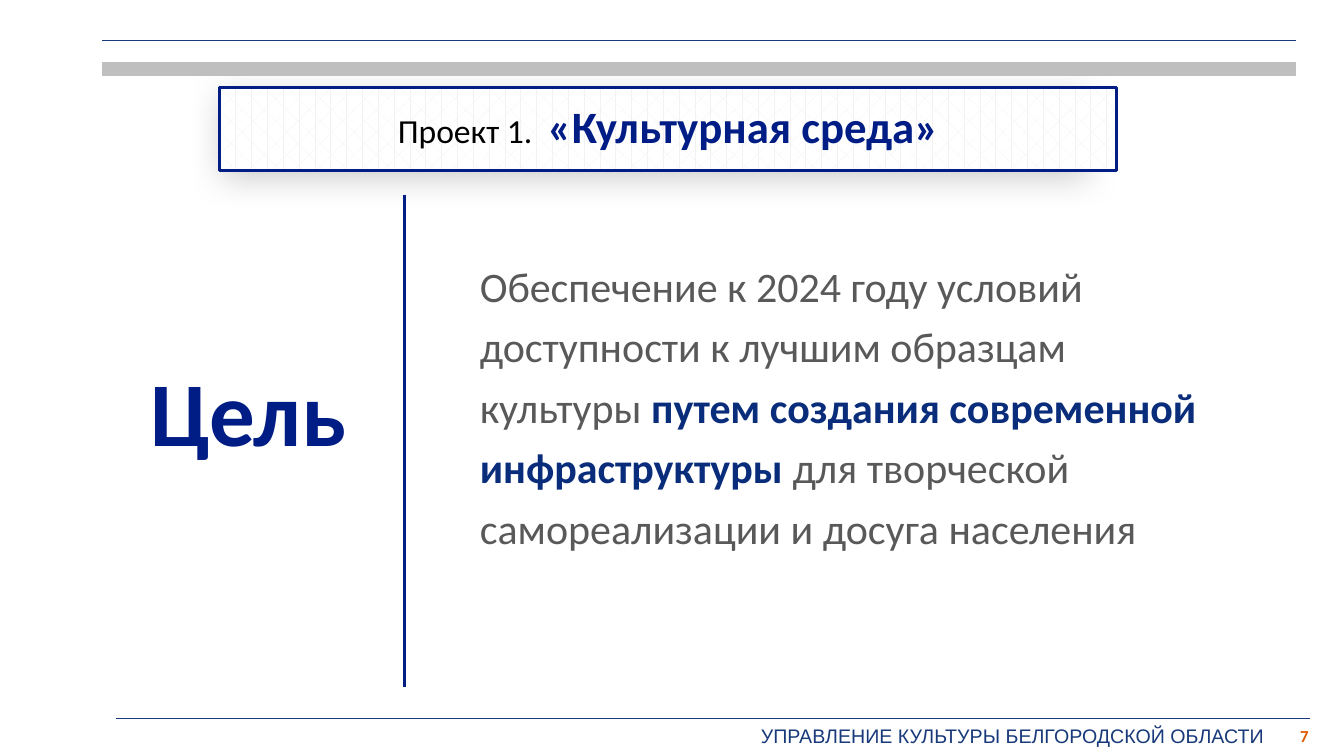
from lxml import etree
from pptx import Presentation
from pptx.dml.color import RGBColor
from pptx.enum.dml import MSO_PATTERN
from pptx.enum.shapes import MSO_CONNECTOR
from pptx.enum.text import MSO_ANCHOR, MSO_AUTO_SIZE, PP_ALIGN
from pptx.oxml import parse_xml
from pptx.oxml.ns import nsdecls, qn
from pptx.util import Pt

STRAIGHT = MSO_CONNECTOR.STRAIGHT
DIVOT = MSO_PATTERN.DIVOT
TOP, MIDDLE = MSO_ANCHOR.TOP, MSO_ANCHOR.MIDDLE
LEFT, CENTER, RIGHT = PP_ALIGN.LEFT, PP_ALIGN.CENTER, PP_ALIGN.RIGHT
NO_FIT = MSO_AUTO_SIZE.NONE

NAVY, RULE, ACCENT = "001C85", "18397A", "092C7B"
BLACK, WHITE, TEXT = "000000", "FFFFFF", "595959"
GREY, PALE, ORANGE = "BFBFBF", "F2F2F2", "DE5A00"

SHADOW = f"""<a:effectLst {nsdecls('a')}>
  <a:outerShdw blurRad="{Pt(24)}" dist="{Pt(12)}" dir="2700000" sx="96000" sy="96000"
      algn="tl" rotWithShape="0">
    <a:srgbClr val="{BLACK}"><a:alpha val="20000"/></a:srgbClr>
  </a:outerShdw>
</a:effectLst>"""


def color(hex_value):
    return RGBColor.from_string(hex_value)


class SlideBuilder:
    font = "Calibri"

    def __init__(self, prs, layout):
        self.slide = prs.slides.add_slide(layout)
        self.shapes = self.slide.shapes

    def line(self, x1, y1, x2, y2, hex_value, width):
        sp = self.shapes.add_connector(STRAIGHT, Pt(x1), Pt(y1), Pt(x2), Pt(y2))
        sp.line.color.rgb = color(hex_value)
        sp.line.width = Pt(width)
        etree.SubElement(sp._element.spPr, qn("a:effectLst"))

    def place(self, sp, x, y, w, h):
        box = {"left": x, "top": y, "width": w, "height": h}
        for name, value in box.items():
            setattr(sp, name, Pt(value))

    def fill_text(self, sp, runs, align=LEFT, anchor=TOP, spacing=1.0, wrap=True,
                  inset=(7.2, 3.6)):
        tf = sp.text_frame
        side, edge = map(Pt, inset)
        frame = {"auto_size": NO_FIT, "word_wrap": wrap, "vertical_anchor": anchor,
                 "margin_left": side, "margin_right": side,
                 "margin_top": edge, "margin_bottom": edge}
        for name, value in frame.items():
            setattr(tf, name, value)
        p = tf.paragraphs[0]
        paragraph = {"alignment": align, "line_spacing": spacing,
                     "space_before": Pt(0), "space_after": Pt(0)}
        for name, value in paragraph.items():
            setattr(p, name, value)
        for text, size, hex_value, bold, *font in runs:
            r = p.add_run()
            r.text = text
            style = {"name": font[0] if font else self.font,
                     "size": Pt(size), "bold": bold}
            for name, value in style.items():
                setattr(r.font, name, value)
            r.font.color.rgb = color(hex_value)

    def text(self, x, y, w, h, runs, **options):
        sp = self.shapes.add_textbox(Pt(x), Pt(y), Pt(w), Pt(h))
        self.fill_text(sp, runs, **options)

    def title(self, x, y, w, h, runs):
        sp = self.shapes.title
        self.place(sp, x, y, w, h)
        sp.fill.patterned()
        sp.fill.pattern = DIVOT
        sp.fill.fore_color.rgb = color(PALE)
        sp.fill.back_color.rgb = color(WHITE)
        sp.line.color.rgb = color(NAVY)
        sp.line.width = Pt(2.25)
        sp._element.spPr.append(parse_xml(SHADOW))
        self.fill_text(sp, runs, align=CENTER, anchor=MIDDLE, spacing=0.9,
                       inset=(9.4, 9.4))

    def body(self, x, y, w, h, runs, spacing):
        sp = self.slide.placeholders[1]
        self.place(sp, x, y, w, h)
        self.fill_text(sp, runs, spacing=spacing)
        pPr = sp.text_frame.paragraphs[0]._p.get_or_add_pPr()
        pPr.set("marL", "0")
        pPr.set("indent", "0")
        etree.SubElement(pPr, qn("a:buNone"))


def main():
    prs = Presentation()
    prs.slide_width, prs.slide_height = Pt(960), Pt(540)
    s = SlideBuilder(prs, prs.slide_layouts[1])

    # Header and footer rules
    s.line(72.7, 28.8, 925.9, 28.8, RULE, 1)
    s.line(72.7, 49, 925.9, 49, GREY, 10)
    s.line(82.8, 513.3, 936, 513.3, RULE, 1)

    # Footer
    s.text(536.4, 513.3, 377.3, 24.5,
           [("УПРАВЛЕНИЕ КУЛЬТУРЫ БЕЛГОРОДСКОЙ ОБЛАСТИ", 14, RULE, False, "Arial")],
           wrap=False)
    s.text(913.7, 511.2, 28.1, 28.8, [("7", 12, ORANGE, True)],
           align=RIGHT, anchor=MIDDLE)

    # Project title
    s.title(157, 62.6, 640.8, 59,
            [("Проект 1.  ", 24, BLACK, False),
             ("«Культурная среда»", 32, NAVY, True)])

    # Goal
    s.text(100.1, 250.6, 156.2, 85.7, [("Цель", 65, NAVY, True)], wrap=False)
    s.line(288.7, 139, 288.7, 491, NAVY, 2.25)
    s.body(335.5, 175, 533.5, 225.4,
           [("Обеспечение к 2024 году условий доступности к лучшим образцам культуры ",
             30, TEXT, False),
            ("путем создания современной инфраструктуры", 30, ACCENT, True),
            (" для творческой самореализации и досуга населения", 30, TEXT, False)],
           spacing=1.2)

    prs.save("out.pptx")


if __name__ == "__main__":
    main()
